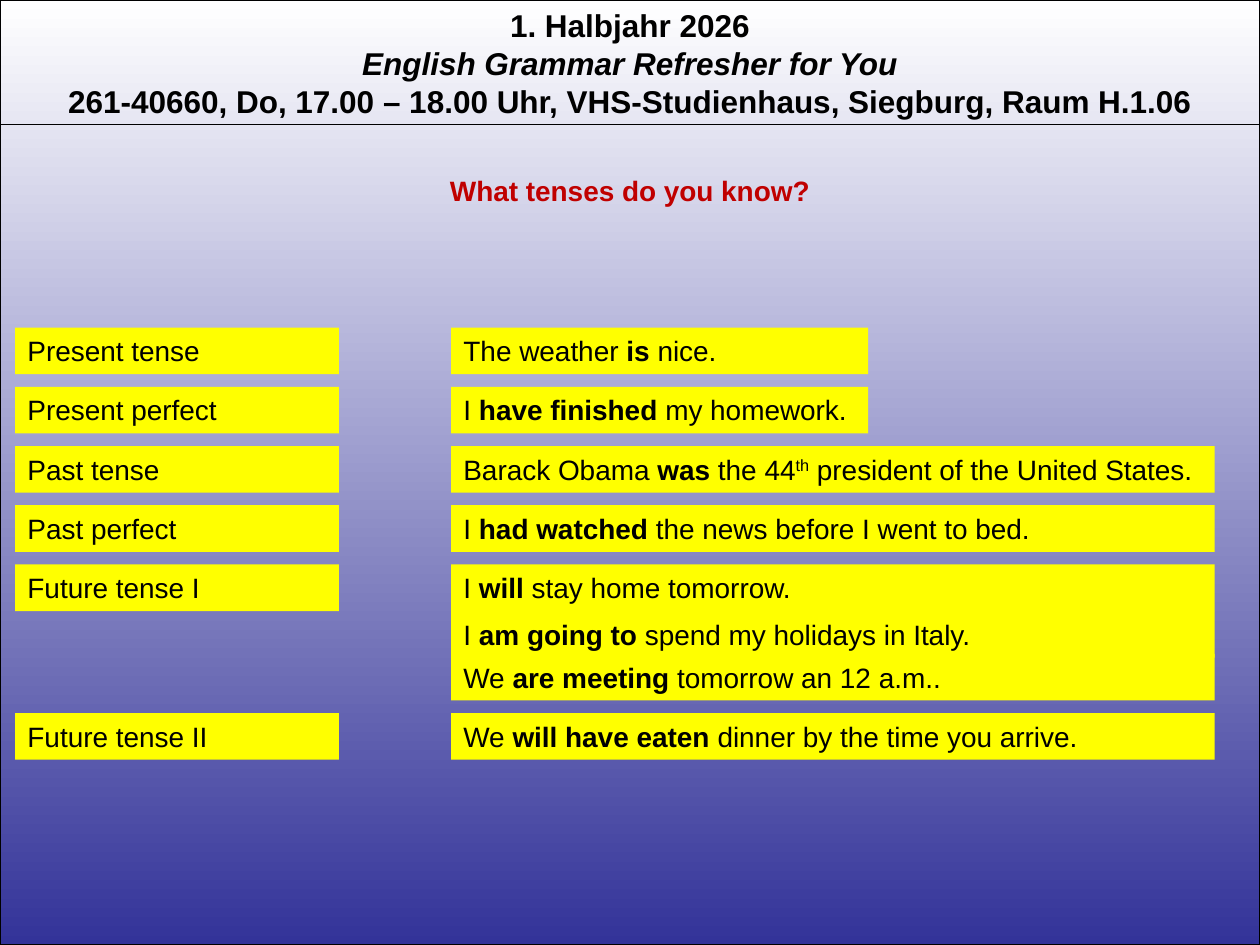
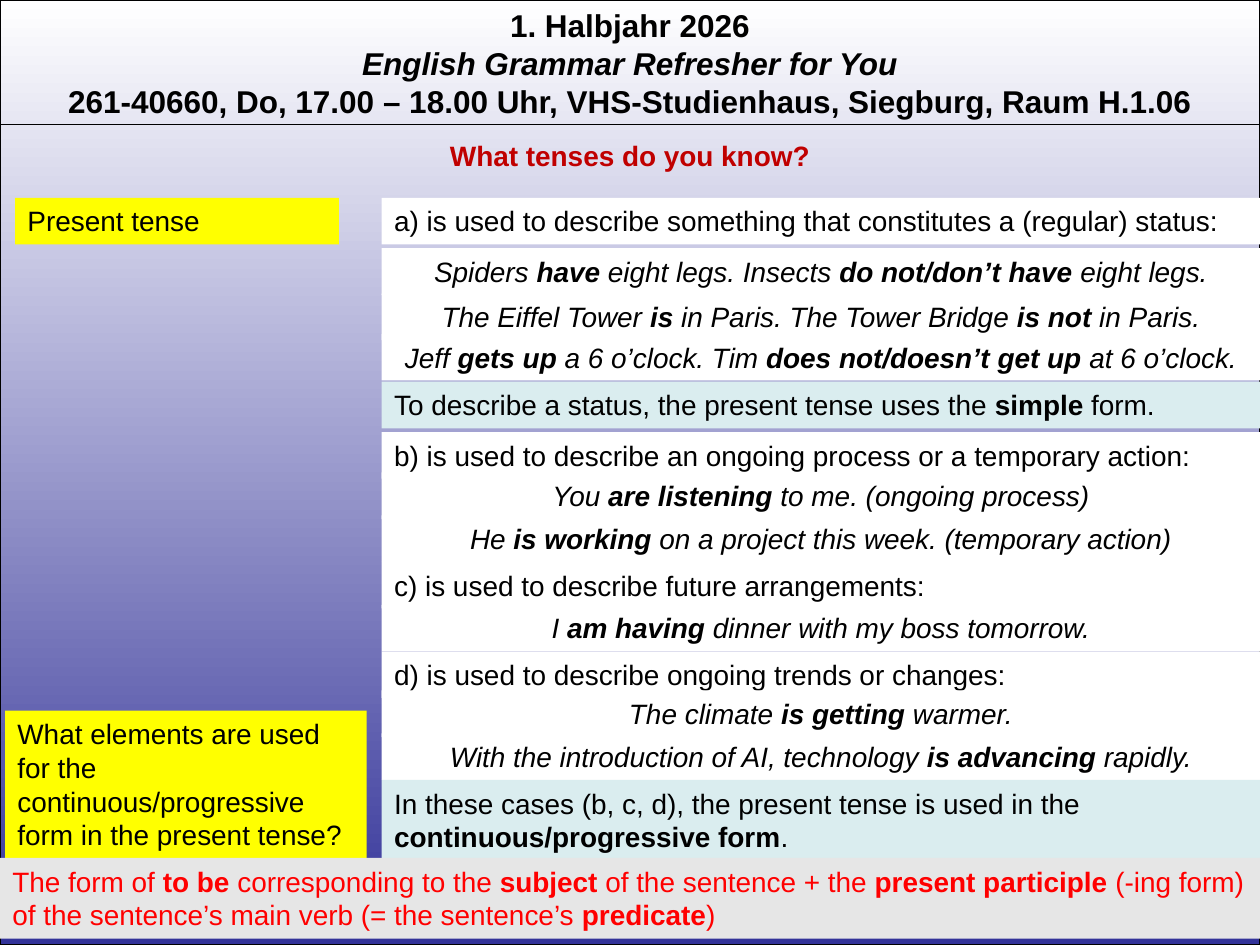
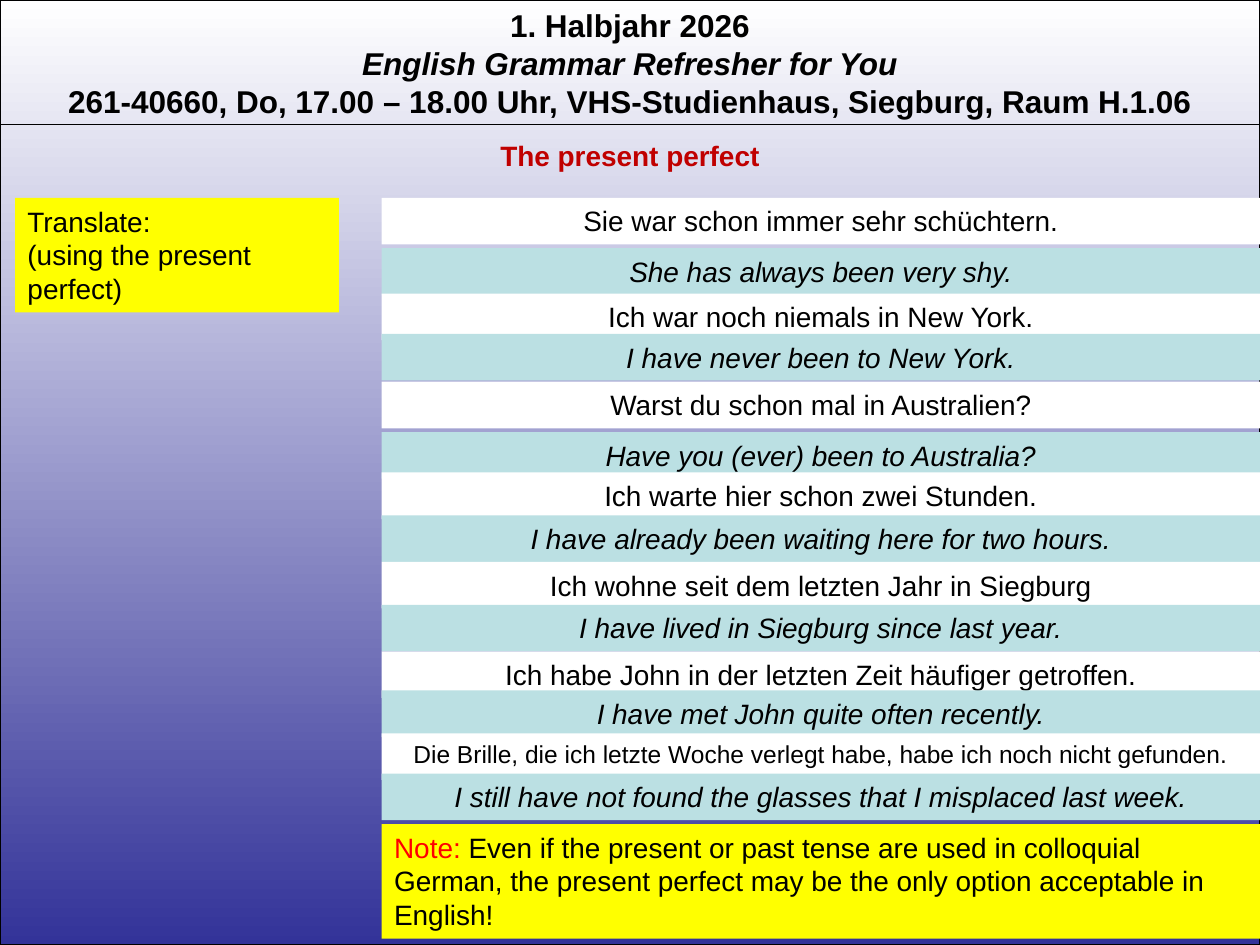
import dataclasses

import lxml.etree
import pptx
import pptx.dml.color
import pptx.enum.shapes
import pptx.enum.text
import pptx.oxml.ns
import pptx.util

COURSE_LINES = (
    "1. Halbjahr 2026",
    "English Grammar Refresher for You",
    "261-40660, Do, 17.00 – 18.00 Uhr, VHS-Studienhaus, Siegburg, Raum H.1.06",
)

TENSES = [
    ("Present tense", "short", ["The weather *is* nice."]),
    ("Present perfect", "short", ["I *have finished *my homework."]),
    ("Past tense", "long",
     ["Barack Obama *was* the 44^th^ president of the United States."]),
    ("Past perfect", "long", ["I *had watched *the news before I went to bed."]),
    ("Future tense I", "long", [
        "I *will *stay home tomorrow.",
        "I *am going to* spend my holidays in Italy.",
        "We *are meeting *tomorrow an 12 a.m..",
    ]),
    ("Future tense II", "long",
     ["We *will have eaten *dinner by the time you arrive."]),
]

PRESENT_TENSE_ROWS = [
    ("rule", "a) is used to describe something that constitutes a (regular) status:"),
    ("example", "Spiders *have* eight legs. Insects *do not/don’t have *eight legs."),
    ("example", "The Eiffel Tower *is* in Paris. The Tower Bridge *is not *in Paris."),
    ("example", "Jeff *gets up *a 6 o’clock. Tim *does not/doesn’t get up *at 6 o’clock."),
    ("summary", "To describe a status, the present tense uses the *simple* form."),
    ("rule", "b) is used to describe an ongoing process or a temporary action:"),
    ("example", "You *are listening *to me. (ongoing process)"),
    ("example", "He *is working *on a project this week. (temporary action)"),
    ("rule", "c) is used to describe future arrangements:"),
    ("example", "I *am having *dinner with my boss tomorrow."),
    ("rule", "d) is used to describe ongoing trends or changes:"),
    ("example", "The climate *is getting *warmer."),
    ("example", "With the introduction of AI, technology *is advancing *rapidly."),
    ("summary", "In these cases (b, c, d), the present tense is used in the "
                "*continuous/progressive form*."),
]
QUESTION = ("What elements are used for the continuous/progressive form "
            "in the present tense?")
ANSWER = ("The form of *to be *corresponding to the *subject* of the sentence + the "
          "*present participle *(-ing form) of the sentence’s main verb "
          "(= the sentence’s *predicate*)")

TRANSLATION_ROWS = [
    ("german", "Sie war schon immer sehr schüchtern."),
    ("english", "She has always been very shy."),
    ("german", "Ich war noch niemals in New York."),
    ("english", "I have never been to New York."),
    ("german", "Warst du schon mal in Australien?"),
    ("english", "Have you (ever) been to Australia?"),
    ("german", "Ich warte hier schon zwei Stunden."),
    ("english", "I have already been waiting here for two hours."),
    ("german", "Ich wohne seit dem letzten Jahr in Siegburg"),
    ("english", "I have lived in Siegburg since last year."),
    ("german", "Ich habe John in der letzten Zeit häufiger getroffen."),
    ("english", "I have met John quite often recently."),
    ("long_german",
     "Die Brille, die ich letzte Woche verlegt habe, habe ich noch nicht gefunden."),
    ("english", "I still have not found the glasses that I misplaced last week."),
]
TASK = "Translate:\n(using the present perfect)"
NOTE = ("~Note: ~Even if the present or past tense are used in colloquial German, "
        "the present perfect may be the only option acceptable in English!")


@dataclasses.dataclass(frozen=True)
class Theme:
    font: str = "Arial"
    header_size: int = 18
    text_size: int = 16
    small_size: int = 14
    black: str = "000000"
    white: str = "FFFFFF"
    indigo: str = "333399"
    heading: str = "C00000"
    red: str = "FF0000"
    yellow: str = "FFFF00"
    pale_teal: str = "DAEDEF"
    teal: str = "BBE0E3"
    grey: str = "E6E6E6"


THEME = Theme()


@dataclasses.dataclass(frozen=True)
class Style:
    fill: str
    centred: bool = False
    italic: bool = False
    bold: bool = False
    size: int = THEME.text_size
    colour: str = THEME.black


STYLES = {
    "label": Style(THEME.yellow),
    "rule": Style(THEME.white),
    "example": Style(THEME.white, centred=True, italic=True),
    "summary": Style(THEME.pale_teal),
    "german": Style(THEME.white, centred=True),
    "long_german": Style(THEME.white, centred=True, size=THEME.small_size),
    "english": Style(THEME.teal, centred=True, italic=True),
    "answer": Style(THEME.grey, colour=THEME.red),
    "heading": Style("", centred=True, bold=True, colour=THEME.heading),
    "header": Style("", centred=True, bold=True, size=THEME.header_size),
}

SLIDE_WIDTH, SLIDE_HEIGHT = 10, 7.5
LINE_HEIGHT = 0.37
HEADER_RULE_TOP = 0.99
LABEL_LEFT, LABEL_WIDTH = 0.12, 2.57
SENTENCE_LEFT = 3.58
SENTENCE_WIDTHS = {"short": 3.31, "long": 6.06}
TENSES_TOP, TENSE_STEP = 2.6, 0.47
SENTENCE_OFFSETS = (0, 0.37, 0.71)
PANEL_LEFT = 3.03
PANEL_WIDTH = SLIDE_WIDTH - PANEL_LEFT
PANEL_TOPS = (1.57, 1.97, 2.33, 2.65, 3.03, 3.43, 3.75,
              4.09, 4.46, 4.8, 5.17, 5.48, 5.82)
MARKS = "*^~"


def inches(*lengths):
    return [pptx.util.Inches(length) for length in lengths]


def rgb(colour):
    return pptx.dml.color.RGBColor.from_string(colour)


def marked_pieces(text):
    for mark in MARKS:
        text = text.replace(mark, f"|{mark}|")
    active = set()
    for piece in filter(None, text.split("|")):
        if piece in MARKS:
            active ^= {piece}
        else:
            yield piece, set(active)


def write_text(shape, text, style):
    frame = shape.text_frame
    frame.word_wrap = True
    frame.vertical_anchor = pptx.enum.text.MSO_ANCHOR.TOP
    frame.auto_size = pptx.enum.text.MSO_AUTO_SIZE.SHAPE_TO_FIT_TEXT
    alignment = pptx.enum.text.PP_ALIGN
    for index, line in enumerate(text.split("\n")):
        paragraph = frame.add_paragraph() if index else frame.paragraphs[0]
        paragraph.alignment = alignment.CENTER if style.centred else alignment.LEFT
        for piece, marks in marked_pieces(line):
            run = paragraph.add_run()
            run.text = piece
            run.font.name = THEME.font
            run.font.size = pptx.util.Pt(style.size)
            run.font.bold = style.bold or "*" in marks
            run.font.italic = style.italic
            run.font.color.rgb = rgb(THEME.red if "~" in marks else style.colour)
            if "^" in marks:
                run._r.get_or_add_rPr().set("baseline", "30000")


def add_rectangle(slide, left, top, width, height):
    shape = slide.shapes.add_shape(
        pptx.enum.shapes.MSO_SHAPE.RECTANGLE, *inches(left, top, width, height))
    shape.shadow.inherit = False
    return shape


def add_box(slide, kind, text, left, top, width, height=LINE_HEIGHT):
    style = STYLES[kind]
    box = add_rectangle(slide, left, top, width, height)
    box.fill.solid()
    box.fill.fore_color.rgb = rgb(style.fill)
    box.line.fill.background()
    write_text(box, text, style)


def set_black_line(shape):
    shape.line.color.rgb = rgb(THEME.black)
    shape.line.width = pptx.util.Pt(0.75)


def add_course_header(layout, slide):
    for placeholder in list(layout.placeholders):
        if placeholder.placeholder_format.idx:
            placeholder.element.getparent().remove(placeholder.element)

    background = add_rectangle(slide, 0, 0, SLIDE_WIDTH, SLIDE_HEIGHT)
    background.fill.gradient()
    background.fill.gradient_angle = 270
    for stop, colour in zip(background.fill.gradient_stops,
                            (THEME.white, THEME.indigo)):
        stop.color.rgb = rgb(colour)
    set_black_line(background)

    header = slide.shapes.add_textbox(*inches(0, 0, SLIDE_WIDTH, 1.01))
    write_text(header, "\n".join(COURSE_LINES), STYLES["header"])
    header.text_frame.paragraphs[1].runs[0].font.italic = True

    rule = slide.shapes.add_connector(
        pptx.enum.shapes.MSO_CONNECTOR.STRAIGHT,
        *inches(0, HEADER_RULE_TOP, SLIDE_WIDTH, HEADER_RULE_TOP))
    set_black_line(rule)
    lxml.etree.SubElement(rule.element.spPr, pptx.oxml.ns.qn("a:effectLst"))

    for position, shape in enumerate((background, header, rule), start=2):
        layout.shapes.element.insert(position, shape.element)


def add_heading(slide, text, top=1.05):
    title = slide.shapes.title
    title.left, title.top, title.width, title.height = inches(
        0, top, SLIDE_WIDTH, LINE_HEIGHT)
    write_text(title, text, STYLES["heading"])


def add_panel(slide, rows, last_top, last_height=LINE_HEIGHT):
    for (kind, text), top in zip(rows, PANEL_TOPS + (last_top,)):
        height = last_height if top == last_top else LINE_HEIGHT
        add_box(slide, kind, text, PANEL_LEFT, top, PANEL_WIDTH, height)


def fill_overview(slide):
    add_heading(slide, "What tenses do you know?", top=1.33)
    top = TENSES_TOP
    for label, length, sentences in TENSES:
        add_box(slide, "label", label, LABEL_LEFT, top, LABEL_WIDTH)
        for sentence, offset in zip(sentences, SENTENCE_OFFSETS):
            add_box(slide, "label", sentence, SENTENCE_LEFT, top + offset,
                    SENTENCE_WIDTHS[length])
        top += TENSE_STEP + offset


def fill_present_tense(slide):
    add_heading(slide, "What tenses do you know?")
    add_box(slide, "label", "Present tense", LABEL_LEFT, PANEL_TOPS[0], LABEL_WIDTH)
    add_panel(slide, PRESENT_TENSE_ROWS, last_top=6.19, last_height=0.64)
    add_box(slide, "label", QUESTION, 0.04, 5.64, 2.87, 1.18)
    add_box(slide, "answer", ANSWER, 0, 6.81, 10.04, 0.64)


def fill_present_perfect(slide):
    add_heading(slide, "The present perfect")
    add_box(slide, "label", TASK, LABEL_LEFT, PANEL_TOPS[0], LABEL_WIDTH, 0.91)
    add_panel(slide, TRANSLATION_ROWS, last_top=6.14)
    add_box(slide, "label", NOTE, PANEL_LEFT, 6.54, PANEL_WIDTH, 0.91)


def main():
    presentation = pptx.Presentation()
    presentation.slide_width, presentation.slide_height = inches(
        SLIDE_WIDTH, SLIDE_HEIGHT)
    layout = presentation.slide_layouts.get_by_name("Title Only")
    fillers = (fill_overview, fill_present_tense, fill_present_perfect)
    slides = [presentation.slides.add_slide(layout) for _ in fillers]
    add_course_header(layout, slides[0])
    for fill_slide, slide in zip(fillers, slides):
        fill_slide(slide)
    presentation.save("out.pptx")


if __name__ == "__main__":
    main()
